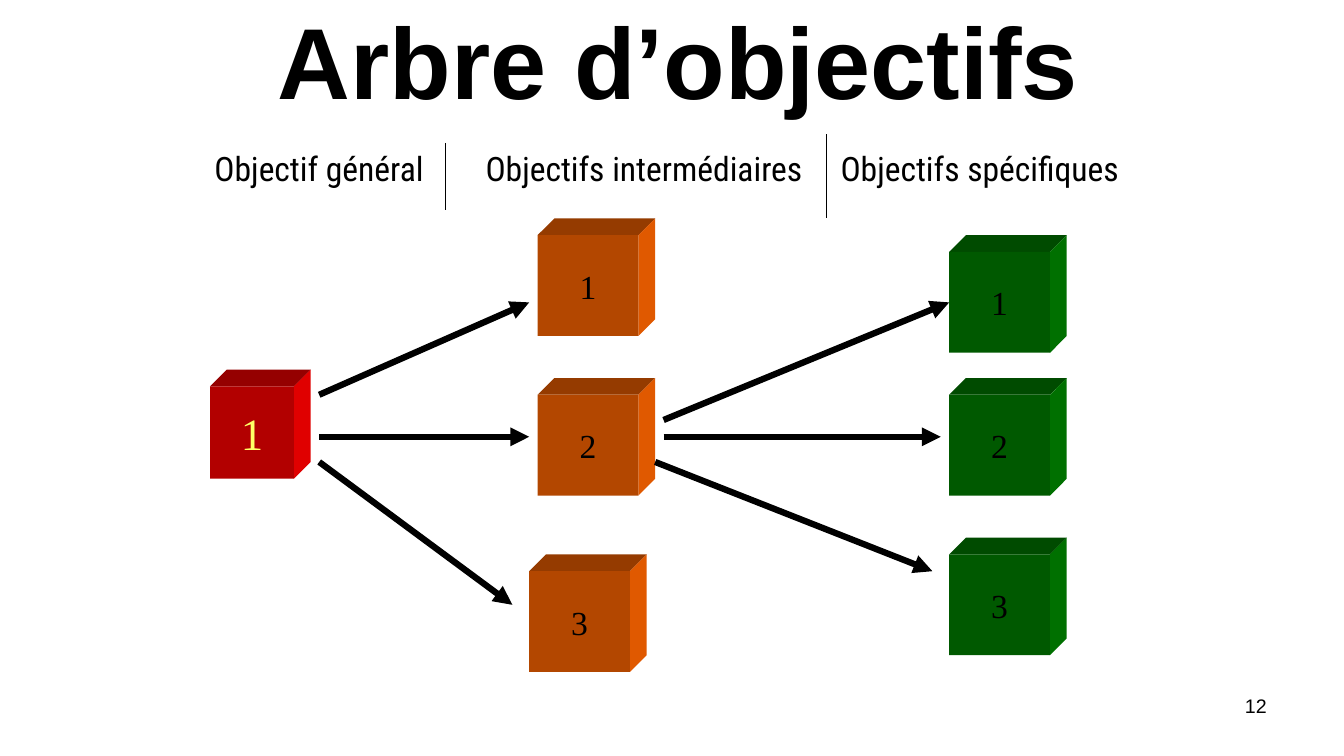
import pptx
import pptx.util
import pptx.dml.color
import pptx.enum.shapes
import pptx.enum.text
import pptx.oxml.ns
from dataclasses import dataclass
from lxml import etree

Pt = pptx.util.Pt
RGB = pptx.dml.color.RGBColor.from_string
ALIGN = pptx.enum.text.PP_ALIGN
ANCHOR = pptx.enum.text.MSO_ANCHOR
KIND = pptx.enum.shapes
qn = pptx.oxml.ns.qn


@dataclass(frozen=True)
class Theme:
    ink: str = "000000"
    paper: str = "FFFFFF"
    pale: str = "FFFF66"
    # front, top and side of each cube
    red: tuple = ("B20000", "950000", "E00000")
    orange: tuple = ("B34700", "953B00", "E05900")
    green: tuple = ("005900", "004B00", "007000")
    sans: str = "Arial"
    narrow: str = "Roboto Condensed"
    serif: str = "Times New Roman"
    huge: int = 72
    big: int = 32
    mid: int = 24
    small: int = 14
    depth: int = 12
    thin: float = 0.75
    thick: float = 4.5


def write(shape, text, font, size, color, align=ALIGN.CENTER,
          anchor=ANCHOR.MIDDLE, bold=False, wrap=True, inset=None, tabs=()):
    frame = shape.text_frame
    frame.word_wrap = wrap
    frame.auto_size = pptx.enum.text.MSO_AUTO_SIZE.NONE
    frame.vertical_anchor = anchor
    if inset is not None:
        frame.margin_left, frame.margin_right = Pt(inset), 0
    para = frame.paragraphs[0]
    para.alignment = align
    if tabs:
        stops = etree.SubElement(para._p.get_or_add_pPr(), qn("a:tabLst"))
        for pos in tabs:
            etree.SubElement(stops, qn("a:tab"), pos=str(Pt(pos)), algn="l")
    run = para.add_run()
    run.text = text
    run.font.name = font
    run.font.size = Pt(size)
    run.font.bold = bold
    run.font.color.rgb = RGB(color)


class Board:
    def __init__(self, slide, theme):
        self.slide = slide
        self.shapes = slide.shapes
        self.theme = theme

    def title(self, text, x, y, w, h):
        box = self.shapes.title
        box.left, box.top, box.width, box.height = map(Pt, (x, y, w, h))
        write(box, text, self.theme.sans, self.theme.huge, self.theme.ink,
              bold=True)

    def label(self, text, x, y, w, h, font, size, **style):
        box = self.shapes.add_textbox(Pt(x), Pt(y), Pt(w), Pt(h))
        write(box, text, font, size, self.theme.ink, anchor=ANCHOR.TOP, **style)

    def paint(self, shape, color):
        shape.shadow.inherit = False
        shape.fill.solid()
        shape.fill.fore_color.rgb = RGB(color)
        shape.line.fill.background()

    def block(self, x, y, w, h, color):
        box = self.shapes.add_shape(KIND.MSO_SHAPE.RECTANGLE,
                                    Pt(x), Pt(y), Pt(w), Pt(h))
        self.paint(box, color)
        return box

    def heads(self, texts, starts, x, y, w, h):
        """Write column heads in one row, each at its own left edge."""
        first, *rest = starts
        write(self.block(x, y, w, h, self.theme.paper), "\t".join(texts),
              self.theme.narrow, self.theme.mid, self.theme.ink,
              align=ALIGN.LEFT, anchor=ANCHOR.TOP, inset=first - x,
              tabs=[start - first for start in rest])

    def face(self, points, color):
        first, *rest = [(Pt(x), Pt(y)) for x, y in points]
        form = self.shapes.build_freeform(*first)
        form.add_line_segments(rest, close=True)
        self.paint(form.convert_to_shape(), color)

    def cube(self, text, x, y, w, h, tones, size, color):
        """Draw a box with its top and right faces; return the front."""
        front, top, side = tones
        d = self.theme.depth
        right, low = x + w, y + h
        self.face([(x, y), (x + d, y - d), (right + d, y - d), (right, y)], top)
        self.face([(right, y), (right + d, y - d), (right + d, low - d),
                   (right, low)], side)
        box = self.block(x, y, w, h, front)
        write(box, text, self.theme.serif, size, color, wrap=False)
        return box

    def line(self, start, end, width):
        link = self.shapes.add_connector(KIND.MSO_CONNECTOR.STRAIGHT,
                                         *map(Pt, start + end))
        link.line.color.rgb = RGB(self.theme.ink)
        link.line.width = Pt(width)
        etree.SubElement(link._element.spPr, qn("a:effectLst"))
        return link

    def arrow(self, start, end):
        link = self.line(start, end, self.theme.thick)
        etree.SubElement(link.line._get_or_add_ln(), qn("a:tailEnd"),
                         type="triangle")
        return link


def main():
    deck = pptx.Presentation()
    deck.slide_width, deck.slide_height = Pt(960), Pt(540)
    theme = Theme()
    board = Board(deck.slides.add_slide(deck.slide_layouts[5]), theme)

    board.label("12", 688, 492, 224, 37, theme.sans, theme.small,
                align=ALIGN.RIGHT)
    board.title("Arbre d’objectifs", 160.3, 9.2, 648, 66)

    board.heads(["Objectif général", "Objectifs intermédiaires",
                 "Objectifs spécifiques"], [153.2, 346.8, 600.4],
                75.6, 102, 804, 54)
    for x, top, low in [(318, 102, 150), (590.4, 96, 156)]:
        board.line((x, top), (x, low), theme.thin)

    board.cube("1", 150, 276, 60, 66, theme.red, theme.big, theme.pale)
    columns = [(theme.orange, [(384, 168), (384, 282), (378, 408)]),
               (theme.green, [(678, 180), (678, 282), (678, 396)])]
    fronts = [[board.cube(str(n), x, y, 72, 72, tones, theme.mid, theme.ink)
               for n, (x, y) in enumerate(spots, 1)]
              for tones, spots in columns]

    for start, end in [((228, 282), (378, 216)), ((228, 312), (378, 312)),
                       ((228, 330), (366, 432)), ((474, 312), (672, 312)),
                       ((468, 330), (666, 408))]:
        board.arrow(start, end)
    board.arrow((474, 300), (678, 216)).end_connect(fronts[1][0], 1)

    deck.save("out.pptx")


if __name__ == "__main__":
    main()
